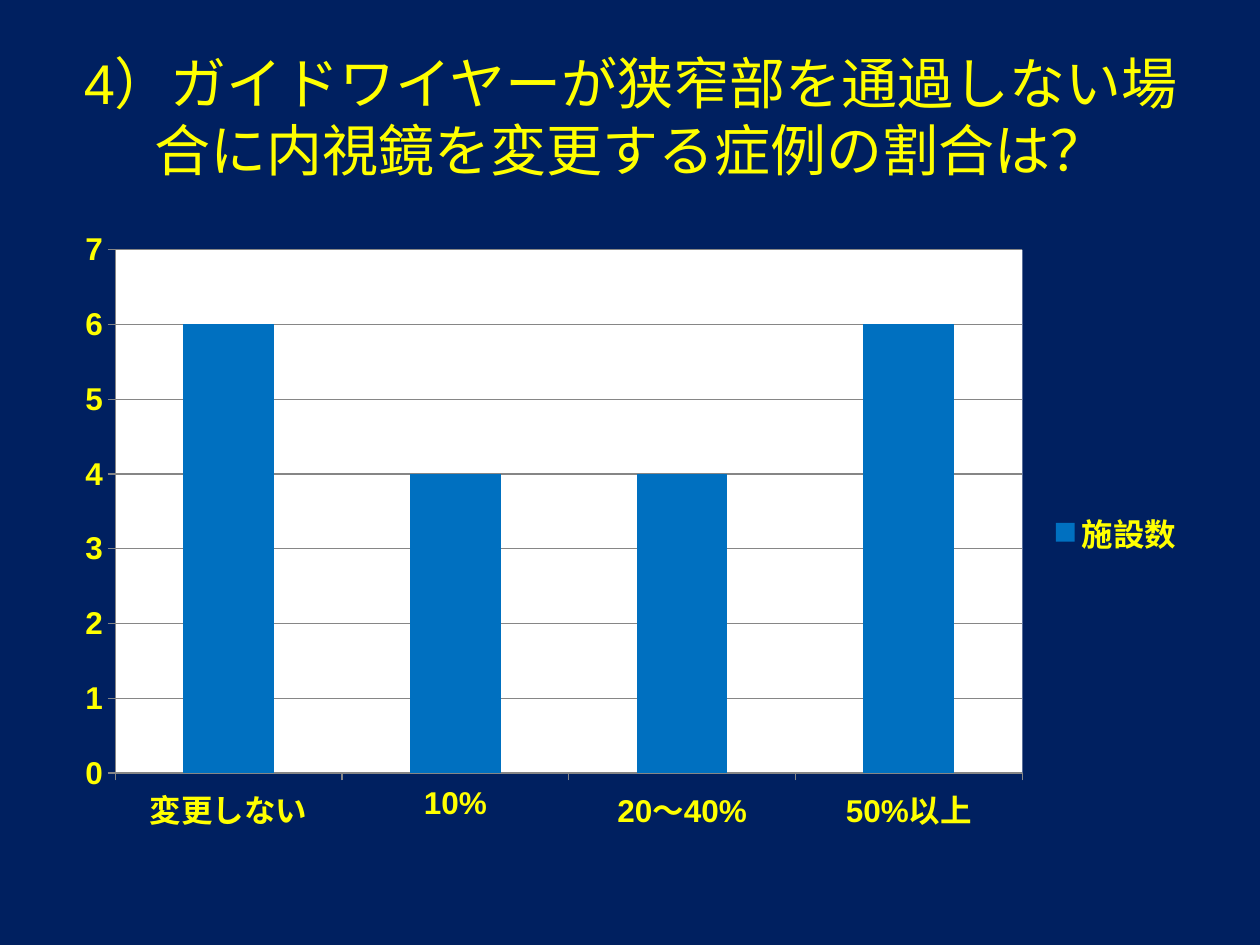
import pptx
import pptx.chart.data
import pptx.dml.color
import pptx.enum.chart
import pptx.enum.text
import pptx.oxml
import pptx.util
from pptx.util import Inches

COLORS = {"background": "002060", "text": "FFFF00", "plot": "FFFFFF", "bar": "0070C0", "line": "868686"}
NS = ('xmlns:c="http://schemas.openxmlformats.org/drawingml/2006/chart" '
      'xmlns:a="http://schemas.openxmlformats.org/drawingml/2006/main"')


def rgb(name):
    return pptx.dml.color.RGBColor.from_string(COLORS[name])


def set_font(font, size, bold):
    font.name = "Arial"
    font.size = pptx.util.Pt(size)
    font.bold = bold
    font.color.rgb = rgb("text")


prs = pptx.Presentation()
prs.slide_width, prs.slide_height = Inches(10), Inches(7.5)
s = prs.slides.add_slide(prs.slide_layouts[6])
s.background.fill.solid()
s.background.fill.fore_color.rgb = rgb("background")

tf = s.shapes.add_textbox(Inches(0.51), Inches(0.29), Inches(9), Inches(1.25)).text_frame
tf.word_wrap = True
tf.vertical_anchor = pptx.enum.text.MSO_ANCHOR.MIDDLE
p = tf.paragraphs[0]
p.text = "4）ガイドワイヤーが狭窄部を通過しない場合に内視鏡を変更する症例の割合は？"
p.alignment = pptx.enum.text.PP_ALIGN.CENTER
set_font(p.font, 32, False)

data = pptx.chart.data.CategoryChartData()
data.categories = ["変更しない", "10%", "20～40%", "50%以上"]
data.add_series("施設数", [6, 4, 4, 6])
chart = s.shapes.add_chart(pptx.enum.chart.XL_CHART_TYPE.COLUMN_CLUSTERED,
                           Inches(0.5), Inches(1.75), Inches(9), Inches(4.95), data).chart
set_font(chart.font, 18, True)
chart.has_title = False
chart.has_legend = True
chart.legend.position = pptx.enum.chart.XL_LEGEND_POSITION.RIGHT
chart.legend.include_in_layout = False

plot = chart.plots[0]
plot.gap_width = 150
plot.vary_by_categories = False
fill = plot.series[0].format.fill
fill.solid()
fill.fore_color.rgb = rgb("bar")

value_axis = chart.value_axis
value_axis.minimum_scale, value_axis.maximum_scale, value_axis.major_unit = 0, 7, 1
value_axis.has_major_gridlines = True
value_axis.major_gridlines.format.line.color.rgb = rgb("line")
for axis in (chart.category_axis, value_axis):
    axis.major_tick_mark = pptx.enum.chart.XL_TICK_MARK.OUTSIDE
    axis.format.line.color.rgb = rgb("line")

plot_area = chart._chartSpace.chart.plotArea
for layout in plot_area.xpath("c:layout"):
    plot_area.remove(layout)
plot_area.insert(0, pptx.oxml.parse_xml(
    f'<c:layout {NS}><c:manualLayout><c:layoutTarget val="inner"/>'
    '<c:xMode val="edge"/><c:yMode val="edge"/><c:x val="0.046"/><c:y val="0.047"/>'
    '<c:w val="0.8"/><c:h val="0.839"/></c:manualLayout></c:layout>'))
plot_area.append(pptx.oxml.parse_xml(
    f'<c:spPr {NS}><a:solidFill><a:srgbClr val="{COLORS["plot"]}"/></a:solidFill></c:spPr>'))

prs.save("out.pptx")
